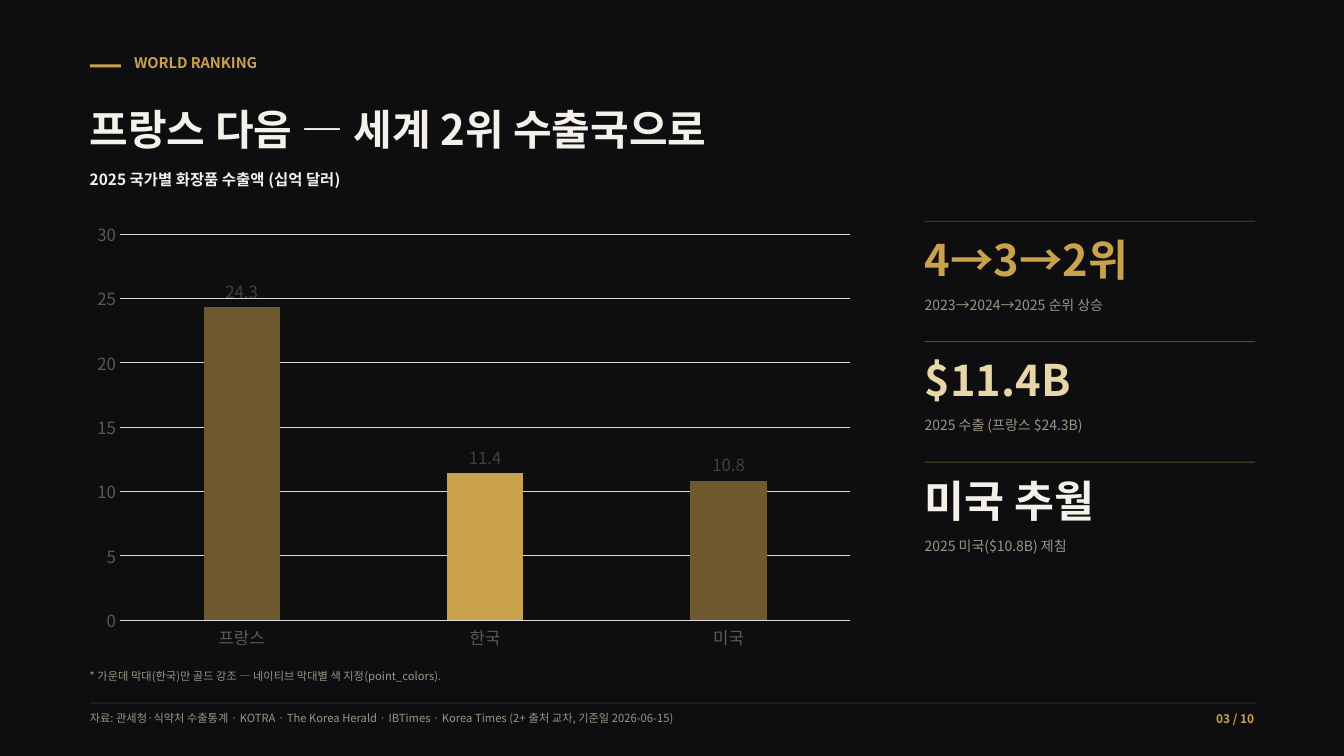
from lxml import etree
from pptx import Presentation
from pptx import util as u
from pptx.chart.data import CategoryChartData
from pptx.dml.color import RGBColor
from pptx.enum import chart as ch, shapes, text
from pptx.oxml.ns import qn

NIGHT = RGBColor(0x0E, 0x0E, 0x10)
GOLD = RGBColor(0xC9, 0xA2, 0x4B)
BRONZE = RGBColor(0x6E, 0x5A, 0x2E)
UMBER = RGBColor(0x5A, 0x4A, 0x24)
SAND = RGBColor(0xE7, 0xD6, 0xA8)
IVORY = RGBColor(0xF4, 0xF1, 0xEA)
STONE = RGBColor(0x9C, 0x94, 0x84)
SLATE = RGBColor(0x2C, 0x2C, 0x32)
BLACK = RGBColor(0, 0, 0)
GRAY = RGBColor(0x59, 0x59, 0x59)
DARK = RGBColor(0x40, 0x40, 0x40)
SILVER = RGBColor(0xD9, 0xD9, 0xD9)

LEFT, WIDE = 0.89, 11.56
SIDE, SPAN = 9.17, 3.28


def apply(item, values):
    for name, value in values.items():
        setattr(item, name, value)


class Deck:
    face = "Noto Sans CJK KR"

    def __init__(self, slide):
        self.slide = slide
        fill = slide.background.fill
        fill.solid()
        fill.fore_color.rgb = NIGHT

    def style(self, font, size, color, bold=False):
        """Set the font for both Latin and Korean letters."""
        apply(font, {"size": u.Pt(size), "bold": bold, "name": self.face})
        font.color.rgb = color
        latin = font._element.find(qn("a:latin"))
        asian = etree.Element(qn("a:ea"), typeface=self.face)
        latin.addnext(asian)

    def bar(self, left, top, width, height, color):
        box = self.slide.shapes.add_shape(
            shapes.MSO_SHAPE.RECTANGLE, *map(u.Inches, (left, top, width, height)))
        box.shadow.inherit = False
        box.fill.solid()
        box.fill.fore_color.rgb = color
        box.line.fill.background()

    def label(self, words, left, top, width, height, size, color,
              bold=False, wrap=True, align=text.PP_ALIGN.LEFT):
        box = self.slide.shapes.add_textbox(
            *map(u.Inches, (left, top, width, height)))
        frame = box.text_frame
        apply(frame, {
            "margin_left": 0, "margin_right": 0,
            "margin_top": 0, "margin_bottom": 0,
            "word_wrap": wrap,
            "auto_size": text.MSO_AUTO_SIZE.SHAPE_TO_FIT_TEXT,
        })
        para = frame.paragraphs[0]
        para.alignment = align
        run = para.add_run()
        run.text = words
        self.style(run.font, size, color, bold)

    def stat(self, top, value, note, color):
        """Draw a rule with a large figure and its caption below."""
        self.bar(SIDE, top, SPAN, 0.01, UMBER)
        self.label(value, SIDE, top + 0.12, SPAN, 0.52, 31, color, True)
        self.label(note, SIDE, top + 0.75, SPAN, 0.17, 10, STONE)

    def chart(self, left, top, width, height, names, values, colors):
        data = CategoryChartData()
        data.categories = names
        data.add_series("Series 1", values)
        chart = self.slide.shapes.add_chart(
            ch.XL_CHART_TYPE.COLUMN_CLUSTERED,
            *map(u.Inches, (left, top, width, height)), data).chart
        apply(chart, {"has_legend": False, "has_title": False})
        self.style(chart.font, 10, BLACK)

        plot = chart.plots[0]
        apply(plot, {"gap_width": 219, "overlap": -27,
                     "vary_by_categories": False, "has_data_labels": True})
        apply(plot.data_labels, {
            "show_value": True, "number_format": "General",
            "number_format_is_linked": False,
            "position": ch.XL_LABEL_POSITION.OUTSIDE_END,
        })
        self.style(plot.data_labels.font, 12, DARK)

        across, up = chart.category_axis, chart.value_axis
        for axis in (across, up):
            apply(axis, {"major_tick_mark": ch.XL_TICK_MARK.NONE,
                         "minor_tick_mark": ch.XL_TICK_MARK.NONE})
            self.style(axis.tick_labels.font, 12, GRAY)
        apply(up, {"minimum_scale": 0, "maximum_scale": 30, "major_unit": 5,
                   "has_major_gridlines": True})
        up.format.line.fill.background()
        for line in (across.format.line, up.major_gridlines.format.line):
            line.color.rgb = SILVER
            line.width = u.Pt(0.75)

        series = plot.series[0]
        series.invert_if_negative = False
        series.format.fill.solid()
        series.format.fill.fore_color.rgb = GOLD
        for index, color in colors.items():
            fill = series.points[index].format.fill
            fill.solid()
            fill.fore_color.rgb = color


def main():
    show = Presentation()
    apply(show, {"slide_width": u.Inches(13.33), "slide_height": u.Inches(7.5)})
    deck = Deck(show.slides.add_slide(show.slide_layouts[6]))

    deck.bar(LEFT, 0.64, 0.31, 0.03, GOLD)
    deck.label("WORLD RANKING", 1.33, 0.53, 1.28, 0.18, 10.5, GOLD, True, wrap=False)
    deck.label("프랑스 다음 — 세계 2위 수출국으로", LEFT, 1.03, WIDE, 0.5, 30, IVORY, True)
    deck.label("2025 국가별 화장품 수출액 (십억 달러)", LEFT, 1.69, 7.5, 0.19, 11, IVORY, True)

    deck.chart(0.81, 2.11, 7.78, 4.42, ["프랑스", "한국", "미국"],
               [24.3, 11.4, 10.8], {0: BRONZE, 2: BRONZE})

    stats = [
        ("4→3→2위", "2023→2024→2025 순위 상승", GOLD),
        ("$11.4B", "2025 수출 (프랑스 $24.3B)", SAND),
        ("미국 추월", "2025 미국($10.8B) 제침", IVORY),
    ]
    for row, (value, note, color) in enumerate(stats):
        deck.stat(2.19 + 1.195 * row, value, note, color)

    deck.label("* 가운데 막대(한국)만 골드 강조 — 네이티브 막대별 색 지정(point_colors).",
               LEFT, 6.64, WIDE, 0.13, 8, STONE)
    deck.bar(LEFT, 6.97, WIDE, 0.01, SLATE)
    deck.label("자료: 관세청·식약처 수출통계 · KOTRA · The Korea Herald · IBTimes · "
               "Korea Times (2+ 출처 교차, 기준일 2026-06-15)",
               LEFT, 7.06, 10.58, 0.13, 8, STONE)
    deck.label("03 / 10", 11.47, 7.06, 0.97, 0.14, 8.5, GOLD, True,
               align=text.PP_ALIGN.RIGHT)
    show.save("out.pptx")


if __name__ == "__main__":
    main()
